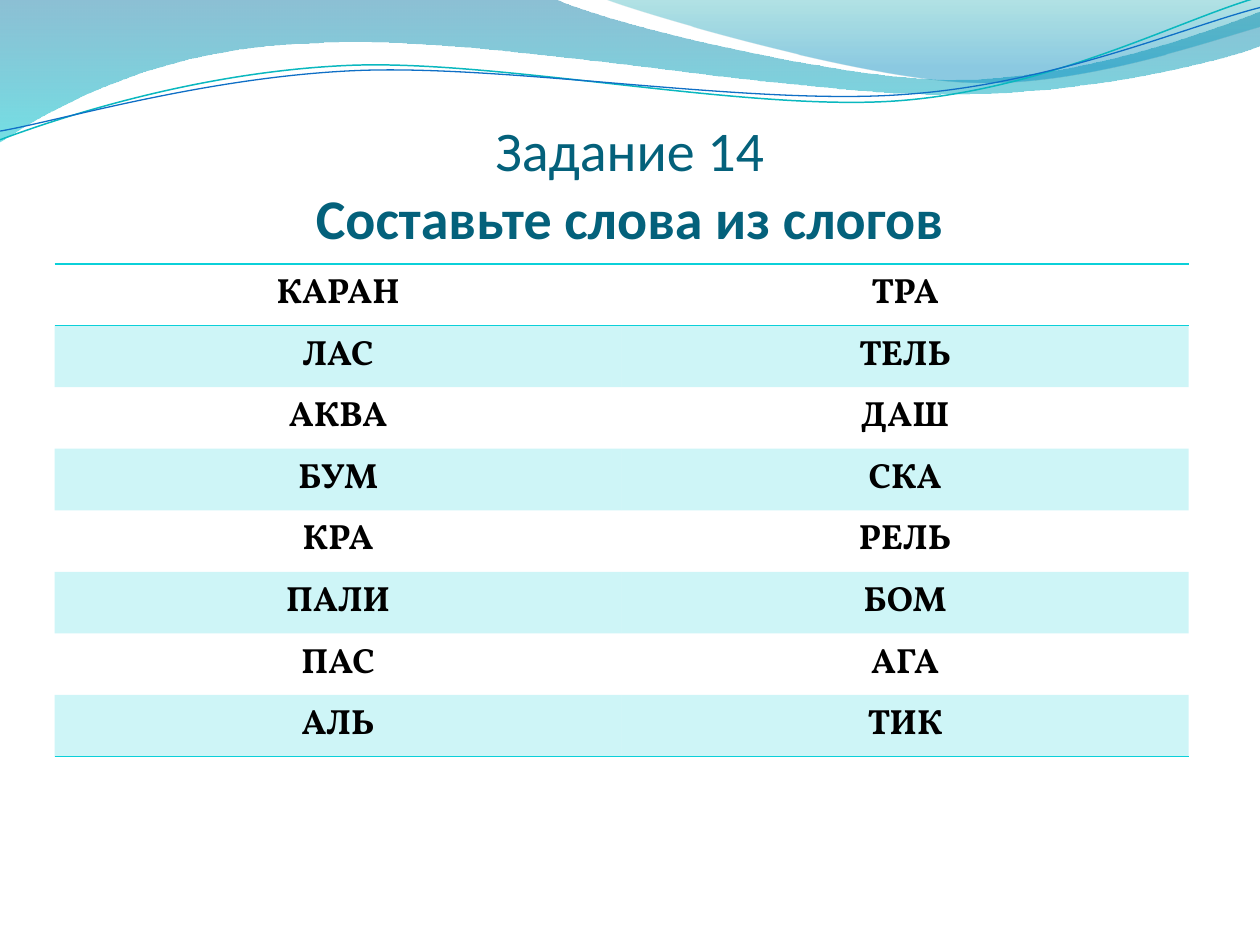
from lxml import etree
from pptx import Presentation
from pptx.dml.color import RGBColor
from pptx.enum import text
from pptx.oxml import ns
from pptx.util import Pt

TITLE = RGBColor(0x04, 0x61, 0x7B)
BLACK = RGBColor(0x00, 0x00, 0x00)
AQUA = RGBColor(0x0B, 0xD0, 0xD9)
BAND_TOP = RGBColor(0x00, 0x74, 0xA1)
BAND_END = RGBColor(0x00, 0xC6, 0xCF)
WING_TOP = RGBColor(0x00, 0xA1, 0xA9)
WING_END = RGBColor(0x00, 0x8B, 0xBF)
TEAL_LINE = RGBColor(0x0A, 0xB8, 0xBF)
BLUE_LINE = RGBColor(0x0F, 0x6F, 0xC6)
PLAIN_TABLE_STYLE = "{2D5ABB26-0587-4C30-8999-92F81FD0307C}"

SYLLABLES = [
    ("КАРАН", "ТРА"), ("ЛАС", "ТЕЛЬ"), ("АКВА", "ДАШ"), ("БУМ", "СКА"),
    ("КРА", "РЕЛЬ"), ("ПАЛИ", "БОМ"), ("ПАС", "АГА"), ("АЛЬ", "ТИК"),
]

# Outlines in points: a pair is a straight step, six numbers are a Bézier curve.
BAND = [(0, 0), (316.8, -0.7), (342.7, 12.2, 478.1, 45.4, 545.8, 45.4),
        (614.2, 45.4, 689.8, 18.7, 720, 6.5), (720.7, 25.9),
        (707.8, 31.7, 626.4, 54.7, 537.1, 54), (447.8, 54, 275, 20.2, 185, 24.5),
        (92.9, 25.9, 33.1, 59.8, -0.7, 81.4)]
WING = [(344.9, -0.7), (366.5, 7.9, 491, 44.6, 553.7, 46.8),
        (616.3, 49.7, 691.9, 23, 720, 15.1), (720, 0)]
TEAL_WAVE = [(0, 79.9), (34.6, 67, 113.8, 41, 199.4, 37.4),
             (284.4, 33.8, 427, 64.1, 513.4, 57.6),
             (599.8, 51.1, 675.4, 10.8, 718.6, -1.4)]
BLUE_WAVE = [(0, 74.9), (33.8, 69.1, 118.1, 43.9, 203.8, 40.3),
             (290.2, 36.7, 429.8, 60.5, 516.2, 54),
             (601.9, 48.2, 677.5, 15.1, 720, 4.3)]


def set_alpha(parent, percent):
    for color in parent.iter(ns.qn("a:srgbClr")):
        etree.SubElement(color, ns.qn("a:alpha"), val=str(percent * 1000))


def bend_segments(shape, left, top, outline):
    """Replace the straight segment of each six-number step by a curve."""
    segments = list(shape._element.iter(ns.qn("a:lnTo")))
    for segment, step in zip(segments, outline[1:]):
        if len(step) == 2:
            continue
        curve = etree.Element(ns.qn("a:cubicBezTo"))
        for x, y in zip(step[::2], step[1::2]):
            etree.SubElement(curve, ns.qn("a:pt"), x=str(Pt(left + x) - shape.left),
                             y=str(Pt(top + y) - shape.top))
        segment.getparent().replace(segment, curve)


def add_outline(page, left, top, outline, close):
    ends = [(Pt(left + step[-2]), Pt(top + step[-1])) for step in outline]
    builder = page.shapes.build_freeform(*ends[0])
    builder.add_line_segments(ends[1:], close=close)
    shape = builder.convert_to_shape()
    bend_segments(shape, left, top, outline)
    shape.shadow.inherit = False
    return shape


def add_gradient_wave(page, left, top, outline, stops):
    shape = add_outline(page, left, top, outline, True)
    shape.line.fill.background()
    shape.fill.gradient()
    shape.fill.gradient_angle = 270
    for stop, (position, color, alpha) in zip(shape.fill.gradient_stops, stops):
        stop.position = position
        stop.color.rgb = color
        set_alpha(stop._gs, alpha)


def add_line_wave(page, left, top, outline, color, width):
    shape = add_outline(page, left, top, outline, False)
    shape.fill.background()
    shape.line.color.rgb = color
    shape.line.width = Pt(width)


def add_waves(page, left, top):
    add_gradient_wave(page, left, top, BAND, [(0, BAND_TOP, 45), (1, BAND_END, 55)])
    add_gradient_wave(page, left, top, WING, [(0, WING_TOP, 30), (0.8, WING_END, 45)])
    add_line_wave(page, left, top, TEAL_WAVE, TEAL_LINE, 0.85)
    add_line_wave(page, left, top, BLUE_WAVE, BLUE_LINE, 0.75)


def add_title(page, left, top, width, height):
    box = page.shapes.add_textbox(Pt(left), Pt(top), Pt(width), Pt(height))
    frame = box.text_frame
    frame.word_wrap = True
    frame.vertical_anchor = text.MSO_ANCHOR.BOTTOM
    frame.margin_left = frame.margin_right = frame.margin_bottom = 0
    para = frame.paragraphs[0]
    para.alignment = text.PP_ALIGN.CENTER
    para.font.name = "Calibri"
    para.font.size = Pt(32)
    para.font.color.rgb = TITLE
    para.add_run().text = "Задание 14"
    para.add_line_break()
    span = para.add_run()
    span.text = "Составьте слова из слогов"
    span.font.bold = True


def add_border(cell, side):
    """Rule one side of a cell; call it before the fill, in the order lnT, lnB."""
    line = etree.SubElement(cell._tc.get_or_add_tcPr(), ns.qn("a:" + side), w=str(Pt(1)))
    fill = etree.SubElement(line, ns.qn("a:solidFill"))
    etree.SubElement(fill, ns.qn("a:srgbClr"), val=str(AQUA))


def style_cell(cell, row, last_row):
    if row == 0:
        add_border(cell, "lnT")
    if row in (0, last_row):
        add_border(cell, "lnB")
    if row % 2:
        cell.fill.solid()
        cell.fill.fore_color.rgb = AQUA
        set_alpha(cell._tc.tcPr.find(ns.qn("a:solidFill")), 20)
    else:
        cell.fill.background()
    para = cell.text_frame.paragraphs[0]
    para.alignment = text.PP_ALIGN.CENTER
    para.font.name = "Vollkorn"
    para.font.size = Pt(20)
    para.font.bold = True
    para.font.color.rgb = BLACK


def add_syllables(page, left, top, width, height):
    frame = page.shapes.add_table(len(SYLLABLES), 2, Pt(left), Pt(top), Pt(width), Pt(height))
    table = frame.table
    table.first_row = table.horz_banding = False
    table._tbl.tblPr.find(ns.qn("a:tableStyleId")).text = PLAIN_TABLE_STYLE
    for row, pair in enumerate(SYLLABLES):
        for column, syllable in enumerate(pair):
            cell = table.cell(row, column)
            cell.text = syllable
            style_cell(cell, row, len(SYLLABLES) - 1)


def main():
    deck = Presentation()
    deck.slide_width, deck.slide_height = Pt(720), Pt(540)
    page = deck.slides.add_slide(deck.slide_layouts[6])
    add_waves(page, 0, 0)
    add_title(page, 0, 43, 720, 100)
    add_syllables(page, 31.2, 150.9, 648, 281.6)
    deck.save("out.pptx")


if __name__ == "__main__":
    main()
